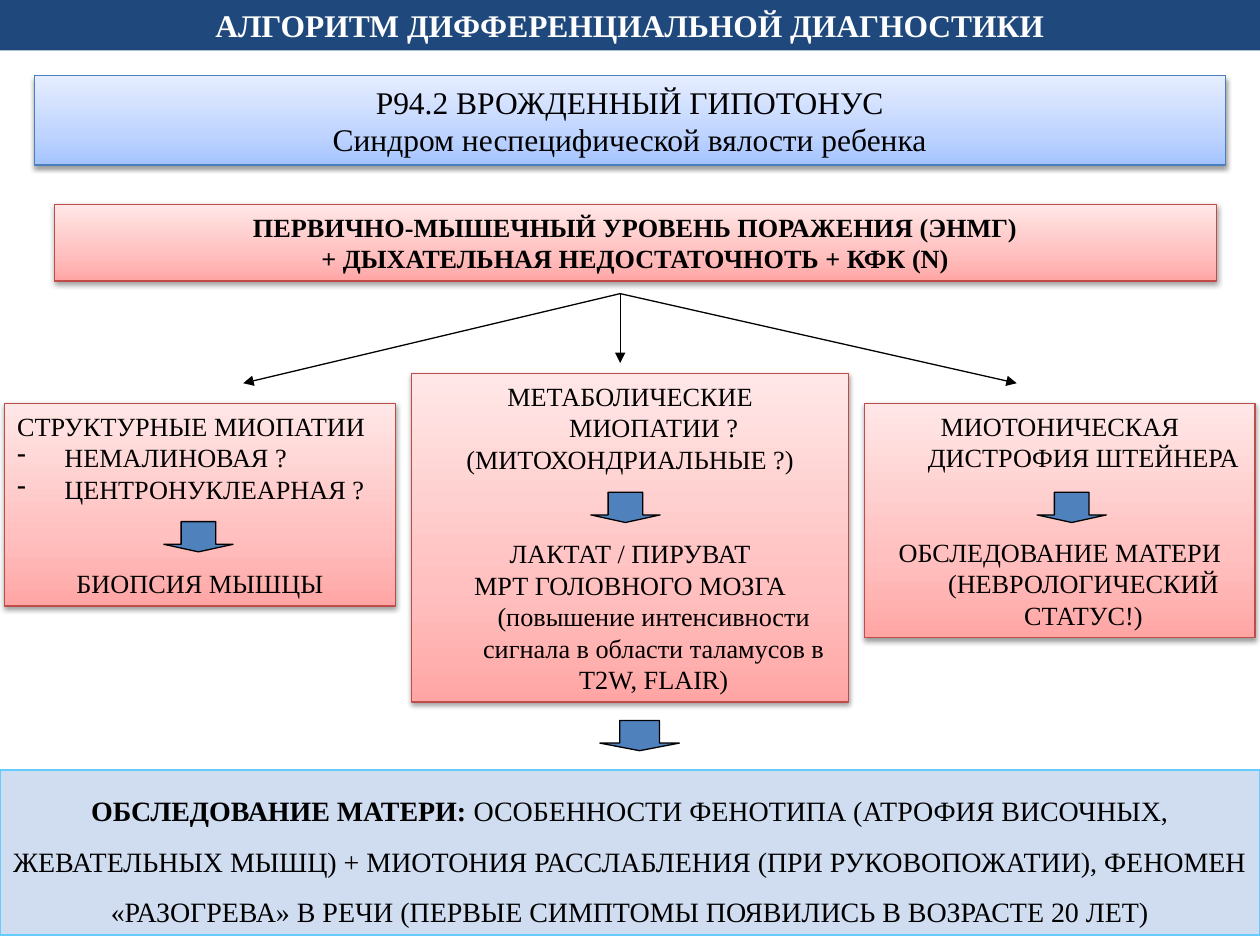
from copy import deepcopy

from lxml.etree import SubElement
from pptx import Presentation
from pptx.dml.color import RGBColor
from pptx.enum.shapes import MSO_CONNECTOR, MSO_SHAPE
from pptx.enum.text import MSO_ANCHOR, PP_ALIGN
from pptx.oxml.ns import qn
from pptx.util import Pt

BLACK = RGBColor(0x00, 0x00, 0x00)
WHITE = RGBColor(0xFF, 0xFF, 0xFF)
NAVY = RGBColor(0x1F, 0x49, 0x7D)
ARROW_BLUE = RGBColor(0x4F, 0x81, 0xBD)
PALE_BLUE = RGBColor(0xD0, 0xDC, 0xF0)
SKY = RGBColor(0x66, 0xCC, 0xFF)
BLUE_LINE = RGBColor(0x4B, 0x7E, 0xBC)
RED_LINE = RGBColor(0xBF, 0x4C, 0x48)
# Gradient colours from the bottom edge to the top edge
BLUE_SHADES = (RGBColor(0xA4, 0xC4, 0xFF), RGBColor(0xBF, 0xD4, 0xFF), RGBColor(0xE6, 0xEE, 0xFF))
RED_SHADES = (RGBColor(0xFF, 0xA6, 0xA5), RGBColor(0xFF, 0xC0, 0xBF), RGBColor(0xFF, 0xE7, 0xE7))


class AlgorithmSlide:
    font_name = "Times New Roman"
    line_width = Pt(0.75)
    indent = Pt(27)
    gap = Pt(36)

    def __init__(self, presentation):
        self.slide = presentation.slides.add_slide(presentation.slide_layouts[5])

    def format_text(self, shape, size, color=BLACK, bold=False):
        text_frame = shape.text_frame
        text_frame.word_wrap = True
        text_frame.vertical_anchor = MSO_ANCHOR.MIDDLE
        for paragraph in text_frame.paragraphs:
            paragraph.alignment = PP_ALIGN.CENTER
            for run in paragraph.runs:
                run.font.name = self.font_name
                run.font.size = Pt(size)
                run.font.bold = bold
                run.font.color.rgb = color

    def title(self, text, height):
        shape = self.slide.shapes.title
        shape.left, shape.top, shape.width, shape.height = 0, 0, Pt(720), Pt(height)
        shape.fill.solid()
        shape.fill.fore_color.rgb = NAVY
        shape.text_frame.text = text
        self.format_text(shape, 18, WHITE, True)

    def solid_shape(self, kind, left, top, width, height, fill, line):
        shape = self.slide.shapes.add_shape(kind, Pt(left), Pt(top), Pt(width), Pt(height))
        shape.fill.solid()
        shape.fill.fore_color.rgb = fill
        shape.line.color.rgb = line
        shape.line.width = self.line_width
        shape.shadow.inherit = False
        return shape

    def gradient_box(self, bounds, lines, size, shades, line, bold=False):
        shape = self.solid_shape(MSO_SHAPE.RECTANGLE, *bounds, shades[0], line)
        shape.fill.gradient()
        shape.fill.gradient_angle = 90
        stop_list = shape._element.spPr.find(qn("a:gradFill")).find(qn("a:gsLst"))
        stop_list.insert(1, deepcopy(stop_list[0]))
        for stop, position, color in zip(shape.fill.gradient_stops, (0, 0.35, 1), shades):
            stop.position = position
            stop.color.rgb = color
        self.drop_shadow(shape)
        shape.text_frame.text = "\n".join(lines)
        self.format_text(shape, size, bold=bold)
        return shape

    def drop_shadow(self, shape):
        effects = shape._element.spPr.find(qn("a:effectLst"))
        shadow = SubElement(effects, qn("a:outerShdw"), blurRad=str(Pt(3.1)),
                            dist=str(Pt(1.6)), dir="5400000", rotWithShape="0")
        color = SubElement(shadow, qn("a:srgbClr"), val="000000")
        SubElement(color, qn("a:alpha"), val="38000")

    def branch(self, bounds, lines, after_gap, left_lines=0):
        """Red box with hanging indents; line number after_gap follows the arrow gap.

        The first left_lines lines are a left-aligned heading and its dashed list."""
        shape = self.gradient_box(bounds, lines, 15, RED_SHADES, RED_LINE)
        for number, paragraph in enumerate(shape.text_frame.paragraphs):
            properties = paragraph._p.get_or_add_pPr()
            properties.set("marL", str(self.indent))
            properties.set("indent", str(-self.indent))
            if number < left_lines:
                paragraph.alignment = PP_ALIGN.LEFT
                if number > 0:
                    SubElement(properties, qn("a:buChar"), char="-")
            if number == after_gap:
                paragraph.space_before = self.gap

    def down_arrow(self, left, top, width=39.6):
        self.solid_shape(MSO_SHAPE.DOWN_ARROW, left, top, width, 17.3, ARROW_BLUE, BLACK).adjustments[1] = 0.25

    def pointer(self, start, end):
        connector = self.slide.shapes.add_connector(
            MSO_CONNECTOR.STRAIGHT, *(Pt(value) for value in start + end))
        connector.line.color.rgb = BLACK
        connector.line.width = self.line_width
        SubElement(connector.line._get_or_add_ln(), qn("a:tailEnd"), type="triangle")
        SubElement(connector._element.spPr, qn("a:effectLst"))

    def conclusion(self, bounds, lead, text):
        shape = self.solid_shape(MSO_SHAPE.RECTANGLE, *bounds, PALE_BLUE, SKY)
        paragraph = shape.text_frame.paragraphs[0]
        for part in (lead, text):
            paragraph.add_run().text = part
        self.format_text(shape, 16)
        paragraph.line_spacing = 1.5
        paragraph.runs[0].font.bold = True


def main():
    presentation = Presentation()
    presentation.slide_width, presentation.slide_height = Pt(720), Pt(540)
    slide = AlgorithmSlide(presentation)

    slide.title("АЛГОРИТМ ДИФФЕРЕНЦИАЛЬНОЙ ДИАГНОСТИКИ", 28.8)
    slide.gradient_box((19.6, 43.2, 680.6, 51.2),
                       ["P94.2 ВРОЖДЕННЫЙ ГИПОТОНУС", "Синдром неспецифической вялости ребенка"],
                       18, BLUE_SHADES, BLUE_LINE)
    slide.gradient_box((31, 116.7, 664, 44),
                       ["ПЕРВИЧНО-МЫШЕЧНЫЙ УРОВЕНЬ ПОРАЖЕНИЯ (ЭНМГ)",
                        "+ ДЫХАТЕЛЬНАЯ НЕДОСТАТОЧНОТЬ + КФК (N)"],
                       15, RED_SHADES, RED_LINE, bold=True)

    for end in ((139, 219), (581, 219), (354.4, 207.4)):
        slide.pointer((354.4, 167.8), end)

    slide.branch((2.7, 230.4, 223.2, 115.9),
                 ["СТРУКТУРНЫЕ МИОПАТИИ", "НЕМАЛИНОВАЯ ?", "ЦЕНТРОНУКЛЕАРНАЯ ?", "БИОПСИЯ МЫШЦЫ"],
                 after_gap=3, left_lines=3)
    slide.branch((235.2, 213.3, 249.8, 187.9),
                 ["МЕТАБОЛИЧЕСКИЕ МИОПАТИИ ?", "(МИТОХОНДРИАЛЬНЫЕ ?)", "ЛАКТАТ / ПИРУВАТ",
                  "МРТ ГОЛОВНОГО МОЗГА (повышение интенсивности сигнала в области таламусов в T2W, FLAIR)"],
                 after_gap=2)
    slide.branch((494, 230.4, 223.2, 133.9),
                 ["МИОТОНИЧЕСКАЯ ДИСТРОФИЯ ШТЕЙНЕРА", "ОБСЛЕДОВАНИЕ МАТЕРИ (НЕВРОЛОГИЧЕСКИЙ СТАТУС!)"],
                 after_gap=1)
    for left, top in ((93.6, 298.1), (337.6, 281.3), (592.6, 281.3)):
        slide.down_arrow(left, top)

    slide.conclusion((0, 440, 720, 94.4), "ОБСЛЕДОВАНИЕ МАТЕРИ:",
                     " ОСОБЕННОСТИ ФЕНОТИПА (АТРОФИЯ ВИСОЧНЫХ, ЖЕВАТЕЛЬНЫХ МЫШЦ) + МИОТОНИЯ "
                     "РАССЛАБЛЕНИЯ (ПРИ РУКОВОПОЖАТИИ), ФЕНОМЕН «РАЗОГРЕВА» В РЕЧИ "
                     "(ПЕРВЫЕ СИМПТОМЫ ПОЯВИЛИСЬ В ВОЗРАСТЕ 20 ЛЕТ)")
    slide.down_arrow(342.8, 411.7, width=45.4)
    presentation.save("out.pptx")


if __name__ == "__main__":
    main()
